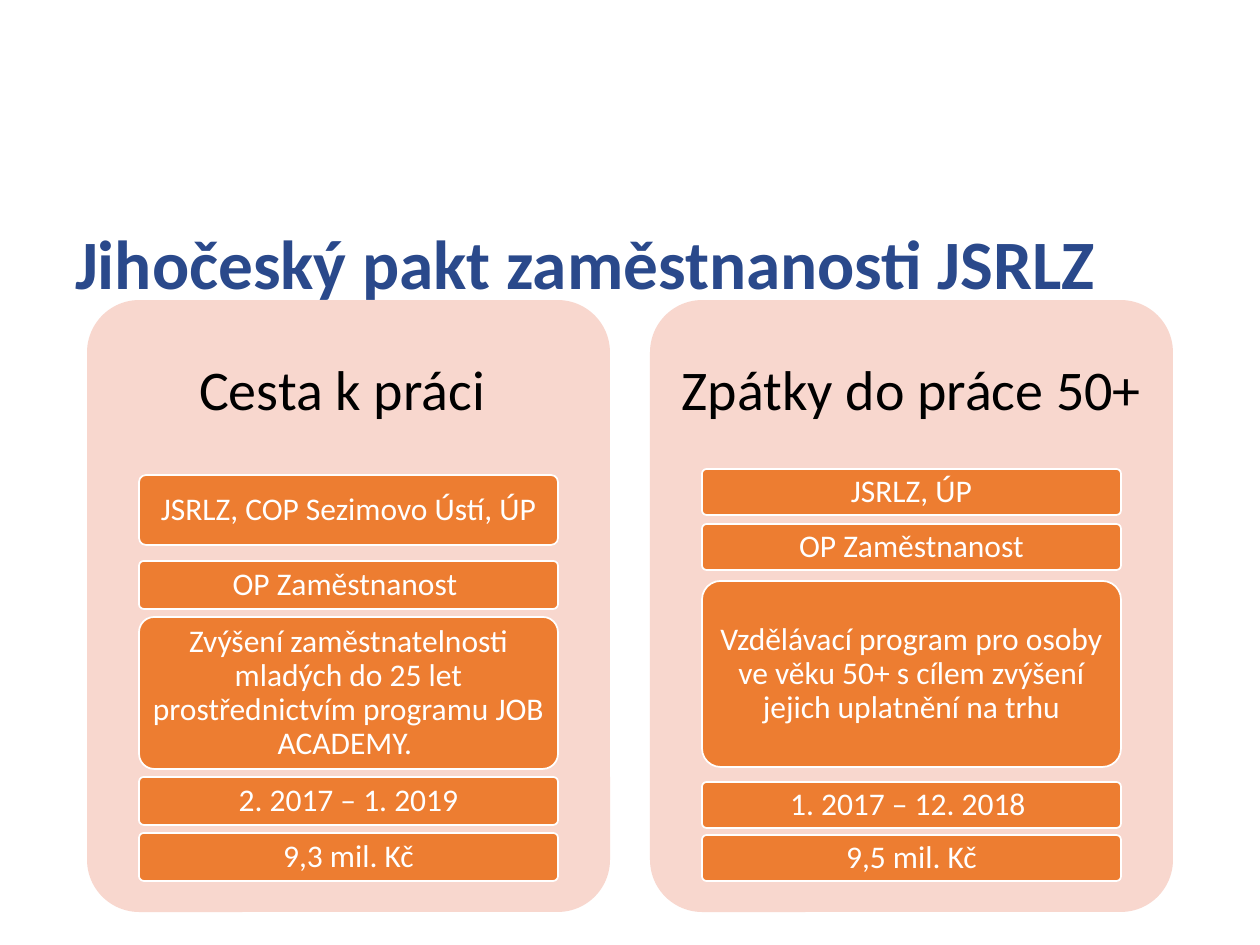
from dataclasses import dataclass

from pptx import Presentation
from pptx.dml.color import RGBColor
from pptx.enum.shapes import MSO_SHAPE as Shape
from pptx.enum.text import MSO_ANCHOR as Anchor, MSO_AUTO_SIZE as AutoSize, PP_ALIGN as Align
from pptx.util import Emu, Pt

EMU_PER_PX = 914400 / 126
FONT = "Calibri"
BLUE, PINK, ORANGE, BLACK, WHITE = "2A498B", "F8D7CE", "ED7D31", "000000", "FFFFFF"
PANEL_TOP, PANEL_WIDTH, PANEL_HEIGHT = 300, 523, 612
HEADING_HEIGHT = 184
CARD_INDENT, CARD_WIDTH = 52, 419


@dataclass
class Card:
    top: int
    height: int
    text: str


@dataclass
class Project:
    left: int
    heading: str
    cards: list[Card]


PROJECTS = [
    Project(87, "Cesta k práci ", [
        Card(475, 70, "JSRLZ, COP Sezimovo Ústí, ÚP"),
        Card(561, 48, "OP Zaměstnanost "),
        Card(617, 152, "Zvýšení zaměstnatelnosti mladých do 25 let "
                       "prostřednictvím programu JOB ACADEMY. "),
        Card(777, 48, "2. 2017 – 1. 2019"),
        Card(833, 48, "9,3 mil. Kč"),
    ]),
    Project(650, "Zpátky do práce 50+", [
        Card(469, 46, "JSRLZ, ÚP"),
        Card(524, 46, "OP Zaměstnanost"),
        Card(581, 186, "Vzdělávací program pro osoby ve věku 50+ "
                       "s cílem zvýšení jejich uplatnění na trhu"),
        Card(782, 46, "1. 2017 – 12. 2018 "),
        Card(835, 46, "9,5 mil. Kč"),
    ]),
]


def px(length: int) -> Emu:
    return Emu(round(length * EMU_PER_PX))


def rgb(color: str) -> RGBColor:
    return RGBColor.from_string(color)


def write(shape, text: str, size: float, color: str, align=Align.CENTER,
          bold: bool = False, inset: tuple[int, int] = (13, 6)) -> None:
    """Set one middle-anchored paragraph; inset is (horizontal, vertical)."""
    frame = shape.text_frame
    frame.word_wrap = True
    frame.auto_size = AutoSize.NONE
    frame.vertical_anchor = Anchor.MIDDLE
    frame.margin_left = frame.margin_right = px(inset[0])
    frame.margin_top = frame.margin_bottom = px(inset[1])
    para = frame.paragraphs[0]
    para.alignment = align
    para.line_spacing = 0.9
    span = para.add_run()
    span.text = text
    span.font.name = FONT
    span.font.size = Pt(size)
    span.font.bold = bold
    span.font.color.rgb = rgb(color)


def add_rounded_box(page, left: int, top: int, width: int, height: int, fill: str):
    box = page.shapes.add_shape(Shape.ROUNDED_RECTANGLE, px(left), px(top),
                                px(width), px(height))
    box.adjustments[0] = 0.1
    box.shadow.inherit = False
    box.fill.solid()
    box.fill.fore_color.rgb = rgb(fill)
    box.line.fill.background()
    return box


def add_project(page, project: Project) -> None:
    add_rounded_box(page, project.left, PANEL_TOP, PANEL_WIDTH, PANEL_HEIGHT, PINK)
    heading = page.shapes.add_textbox(px(project.left), px(PANEL_TOP),
                                      px(PANEL_WIDTH), px(HEADING_HEIGHT))
    write(heading, project.heading, 32, BLACK, inset=(16, 16))
    for card in project.cards:
        box = add_rounded_box(page, project.left + CARD_INDENT, card.top,
                              CARD_WIDTH, card.height, ORANGE)
        box.line.color.rgb = rgb(WHITE)
        box.line.width = Pt(1)
        write(box, card.text, 18, WHITE, inset=(6, 5))


def main() -> None:
    deck = Presentation()
    deck.slide_width, deck.slide_height = px(1260), px(945)
    page = deck.slides.add_slide(deck.slide_layouts[5])
    title = page.shapes.title
    title.left, title.top, title.width, title.height = px(62), px(227), px(1086), px(81)
    write(title, "Jihočeský pakt zaměstnanosti JSRLZ", 39.6, BLUE, Align.LEFT, bold=True)
    for project in PROJECTS:
        add_project(page, project)
    deck.save("out.pptx")


if __name__ == "__main__":
    main()
